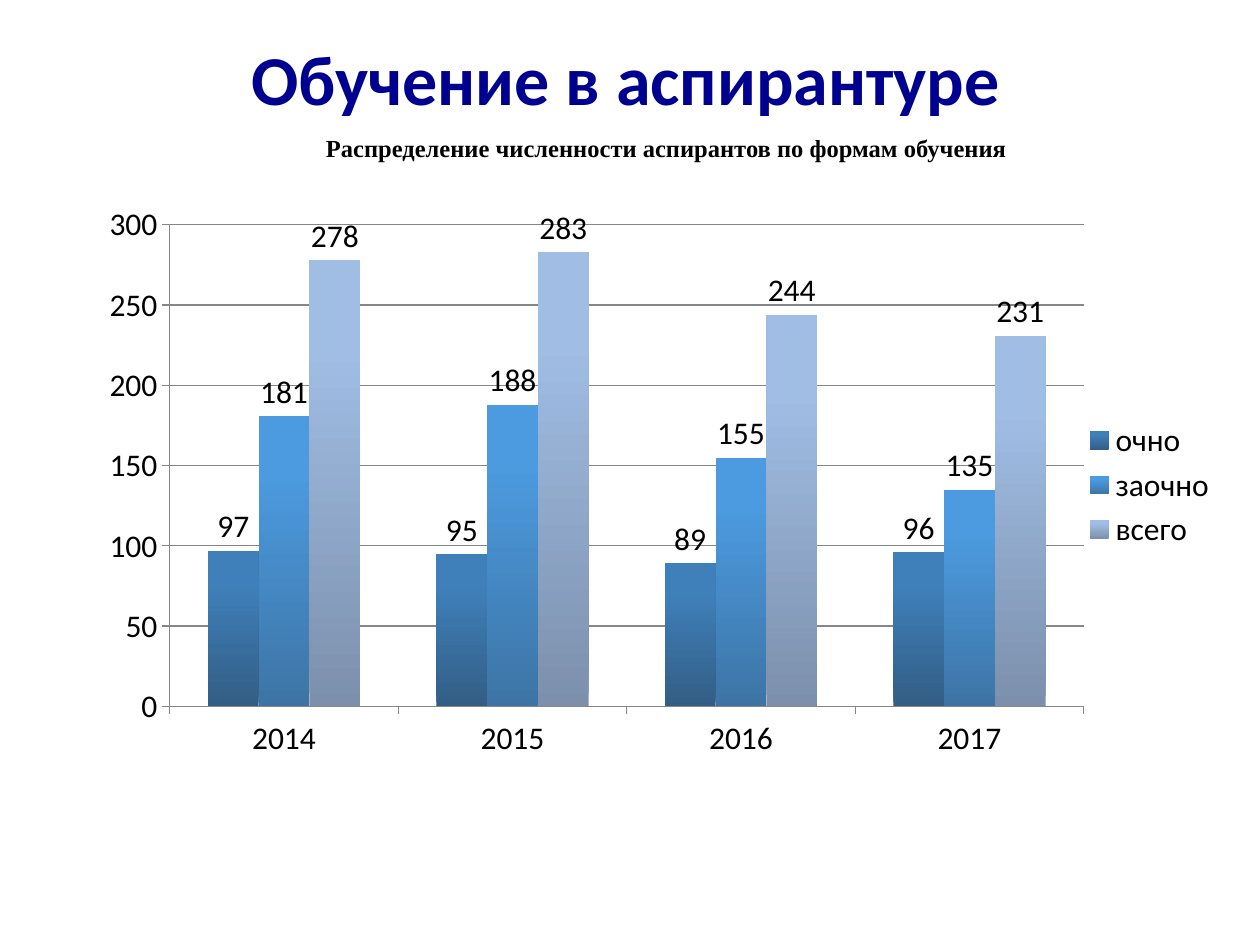
from dataclasses import dataclass

from lxml.etree import SubElement
from pptx import Presentation
from pptx.chart.data import CategoryChartData
from pptx.dml.color import RGBColor
from pptx.enum.chart import XL_CHART_TYPE, XL_LABEL_POSITION, XL_LEGEND_POSITION, XL_TICK_MARK
from pptx.enum.text import MSO_ANCHOR, PP_ALIGN
from pptx.oxml.ns import qn
from pptx.util import Inches, Pt

COLORS = {
    "title": "000090",
    "text": "000000",
    "line": "868686",
    "full_time_dark": "325E85",
    "full_time_light": "3F80BA",
    "part_time_dark": "3D74A5",
    "part_time_light": "4C9ADF",
    "total_dark": "7C90AC",
    "total_light": "A0BDE4",
}
YEARS = ["2014", "2015", "2016", "2017"]


@dataclass
class StudyForm:
    name: str
    counts: list[int]
    color: str


STUDY_FORMS = [
    StudyForm("очно", [97, 95, 89, 96], "full_time"),
    StudyForm("заочно", [181, 188, 155, 135], "part_time"),
    StudyForm("всего ", [278, 283, 244, 231], "total"),
]


def rgb(name: str) -> RGBColor:
    return RGBColor.from_string(COLORS[name])


def place(box, left: float, top: float, width: float, height: float) -> None:
    box.left, box.top = Inches(left), Inches(top)
    box.width, box.height = Inches(width), Inches(height)


def write(box, text: str, *, font: str, size: float, color: str) -> None:
    frame = box.text_frame
    frame.word_wrap = True
    frame.vertical_anchor = MSO_ANCHOR.MIDDLE
    para = frame.paragraphs[0]
    para.alignment = PP_ALIGN.CENTER
    span = para.add_run()
    span.text = text
    span.font.name = font
    span.font.size = Pt(size)
    span.font.bold = True
    span.font.color.rgb = rgb(color)


def set_plot_area(chart, **fractions: float) -> None:
    plot_area = chart.plots[0]._element.getparent()
    layout = plot_area.find(qn("c:layout"))
    if layout is None:
        layout = SubElement(plot_area, qn("c:layout"))
        plot_area.insert(0, layout)
    manual = SubElement(layout, qn("c:manualLayout"))
    settings = {"layoutTarget": "inner", "xMode": "edge", "yMode": "edge", **fractions}
    for tag, value in settings.items():
        SubElement(manual, qn(f"c:{tag}")).set("val", str(value))


def style_series(series, form: StudyForm) -> None:
    fill = series.format.fill
    fill.gradient()
    fill.gradient_angle = 90
    dark, light = fill.gradient_stops
    dark.position, light.position = 0, 0.8
    dark.color.rgb = rgb(f"{form.color}_dark")
    light.color.rgb = rgb(f"{form.color}_light")
    series.invert_if_negative = False
    labels = series.data_labels
    labels.show_value = True
    labels.position = XL_LABEL_POSITION.OUTSIDE_END


def add_study_chart(page) -> None:
    data = CategoryChartData()
    data.categories = YEARS
    for form in STUDY_FORMS:
        data.add_series(form.name, form.counts)
    chart = page.shapes.add_chart(
        XL_CHART_TYPE.COLUMN_CLUSTERED,
        Inches(0.34), Inches(1.55), Inches(9.42), Inches(4.6), data,
    ).chart
    chart.has_title = False
    chart.font.name = "Calibri"
    chart.font.size = Pt(18)
    chart.font.color.rgb = rgb("text")
    chart.has_legend = True
    chart.legend.position = XL_LEGEND_POSITION.RIGHT
    chart.legend.include_in_layout = False
    set_plot_area(chart, x=0.107, y=0.051, w=0.77, h=0.831)
    plot = chart.plots[0]
    plot.gap_width = 150
    plot.vary_by_categories = False
    for series, form in zip(plot.series, STUDY_FORMS):
        style_series(series, form)
    for axis in (chart.category_axis, chart.value_axis):
        axis.major_tick_mark = XL_TICK_MARK.OUTSIDE
        axis.format.line.color.rgb = rgb("line")
    scale = chart.value_axis
    scale.minimum_scale, scale.maximum_scale, scale.major_unit = 0, 300, 50
    scale.has_major_gridlines = True
    scale.major_gridlines.format.line.color.rgb = rgb("line")


def main() -> None:
    deck = Presentation()
    deck.slide_width, deck.slide_height = Inches(10), Inches(7.5)
    page = deck.slides.add_slide(deck.slide_layouts[5])
    title = page.shapes.title
    place(title, 0.16, -0.01, 9.61, 1.25)
    write(title, "Обучение в аспирантуре", font="Calibri", size=40, color="title")
    subtitle = page.shapes.add_textbox(Inches(2.24), Inches(1), Inches(6.1), Inches(0.34))
    write(subtitle, "Распределение численности аспирантов по формам обучения",
          font="Times New Roman", size=14, color="text")
    add_study_chart(page)
    deck.save("out.pptx")


if __name__ == "__main__":
    main()
